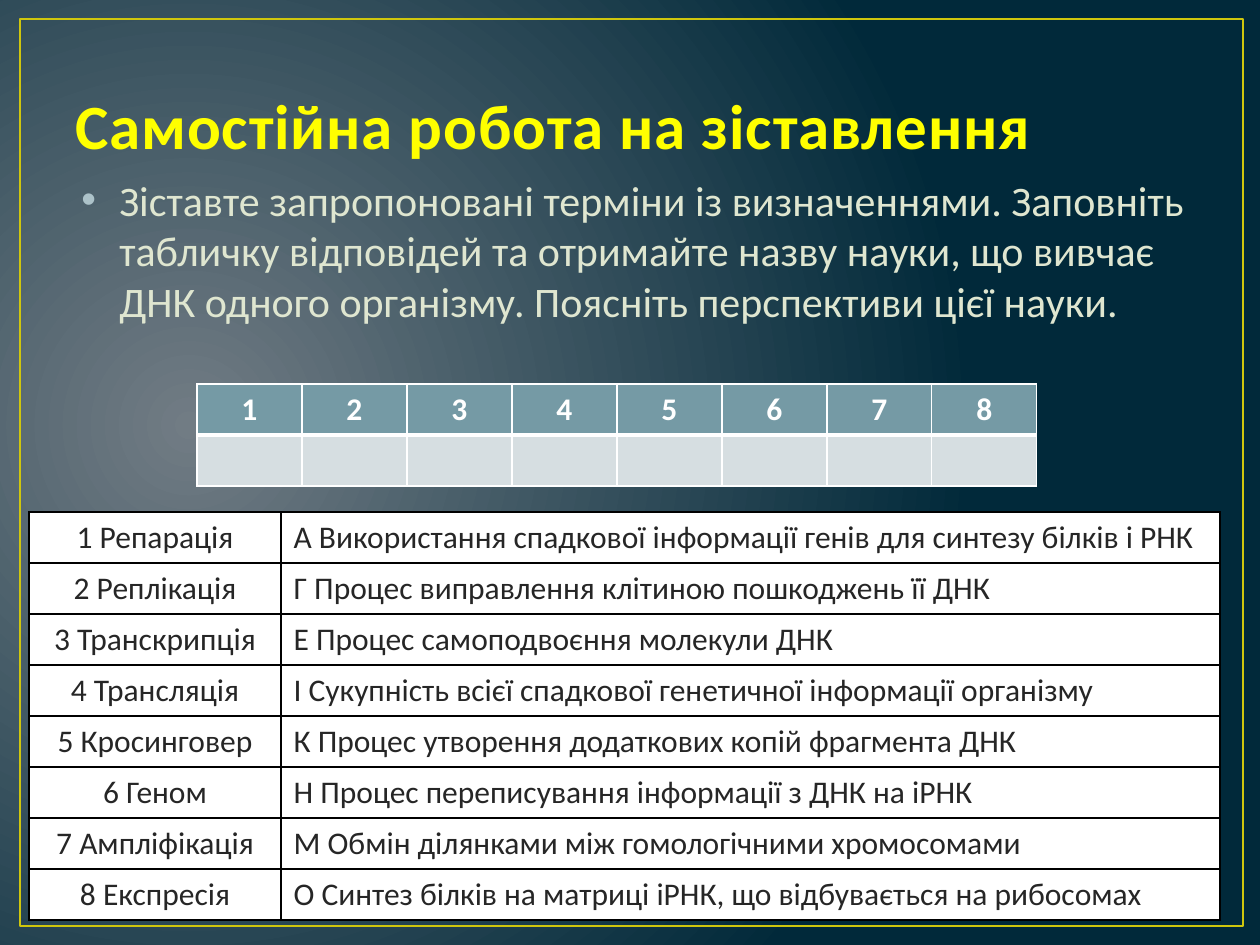
from lxml import etree
from pptx import Presentation
from pptx.dml.color import RGBColor
from pptx.enum.shapes import MSO_SHAPE
from pptx.enum.text import MSO_ANCHOR, PP_ALIGN
from pptx.oxml.ns import qn
from pptx.util import Emu, Pt

RECT = MSO_SHAPE.RECTANGLE
LEFT, CENTER = PP_ALIGN.LEFT, PP_ALIGN.CENTER
TOP, BOTTOM = MSO_ANCHOR.TOP, MSO_ANCHOR.BOTTOM
FONT = "Calibri"

# Content
TITLE = "Самостійна робота на зіставлення"
TASK = ("Зіставте запропоновані терміни із визначеннями. Заповніть табличку "
        "відповідей та отримайте назву науки, що вивчає ДНК одного організму. "
        "Поясніть перспективи цієї науки.")
TERMS = [
    ("1 Репарація", "А Використання спадкової інформації генів для синтезу білків і РНК"),
    ("2 Реплікація", "Г Процес виправлення клітиною пошкоджень її ДНК"),
    ("3 Транскрипція", "Е Процес самоподвоєння молекули ДНК"),
    ("4 Трансляція", "І Сукупність всієї спадкової генетичної інформації організму"),
    ("5 Кросинговер", "К Процес утворення додаткових копій фрагмента ДНК"),
    ("6 Геном", "Н Процес переписування інформації з ДНК на іРНК"),
    ("7 Ампліфікація", "М Обмін ділянками між гомологічними хромосомами"),
    ("8 Експресія", "О Синтез білків на матриці іРНК, що відбувається на рибосомах"),
]
COLORS = {
    "glow": "717C84", "deep": "01293A", "frame": "CFC60D", "title": "FFFF00",
    "task": "DFE6D0", "bullet": "ACC2C9", "ink": "262626", "white": "FFFFFF",
    "black": "000000", "head": "759AA5", "answer": "D6DEE1",
}
ROW = 51


def px(n):
    return Emu(round(n * 914400 / 126))


def rgb(name):
    return RGBColor.from_string(COLORS[name])


def style(para, size, color, bold=False, align=LEFT):
    para.alignment = align
    font = para.font
    font.name, font.size, font.bold = FONT, Pt(size), bold
    font.color.rgb = rgb(color)


def add_text(slide, box, text, size, color, bold=False, anchor=TOP):
    frame = slide.shapes.add_textbox(*map(px, box)).text_frame
    frame.word_wrap = True
    frame.vertical_anchor = anchor
    para = frame.paragraphs[0]
    para.text = text
    style(para, size, color, bold)
    return para


def add_grid(slide, left, top, cols, count):
    table = slide.shapes.add_table(
        count, len(cols), px(left), px(top), px(sum(cols)), px(ROW * count)).table
    for col, width in zip(table.columns, cols):
        col.width = px(width)
    for row in table.rows:
        row.height = px(ROW)
    return table


def fill_cell(cell, text, fill, ink, line, widths, bold=False, align=CENTER, anchor=TOP):
    cell.fill.solid()
    cell.fill.fore_color.rgb = rgb(fill)
    cell.vertical_anchor = anchor
    cell.text = text
    style(cell.text_frame.paragraphs[0], 18, ink, bold, align)
    # Borders go before the fill
    props = cell._tc.get_or_add_tcPr()
    for i, (side, width) in enumerate(zip("LRTB", widths)):
        edge = etree.Element(qn(f"a:ln{side}"), w=str(Pt(width)))
        solid = etree.SubElement(edge, qn("a:solidFill"))
        etree.SubElement(solid, qn("a:srgbClr"), val=COLORS[line])
        props.insert(i, edge)


def paint_back(slide):
    fill = slide.background.fill
    fill.gradient()
    for stop, name in zip(fill.gradient_stops, ("glow", "deep")):
        stop.color.rgb = rgb(name)
    grad = next(slide._element.iter(qn("a:gradFill")))
    path = etree.Element(qn("a:path"), {"path": "circle"})
    etree.SubElement(path, qn("a:fillToRect"), l="15000", t="50000", r="85000", b="60000")
    grad.replace(grad.find(qn("a:lin")), path)


def main():
    prs = Presentation()
    prs.slide_width, prs.slide_height = px(1260), px(945)
    slide = prs.slides.add_slide(prs.slide_layouts[6])
    paint_back(slide)

    # Frame
    frame = slide.shapes.add_shape(RECT, *map(px, (20, 19, 1223, 907)))
    frame.shadow.inherit = False
    frame.fill.background()
    frame.line.color.rgb = rgb("frame")
    frame.line.width = Pt(1.5)

    # Title and task
    title = add_text(slide, (63, 38, 1134, 130), TITLE, 36, "title", True, BOTTOM)
    title.runs[0].font._element.set("spc", "50")
    task = add_text(slide, (69, 168, 1134, 624), TASK, 24, "task")
    props = task._p.get_or_add_pPr()
    props.set("marL", str(px(38)))
    props.set("indent", str(px(-38)))
    tint = etree.Element(qn("a:buClr"))
    etree.SubElement(tint, qn("a:srgbClr"), val=COLORS["bullet"])
    mark = etree.Element(qn("a:buFont"), typeface="Arial")
    dot = etree.Element(qn("a:buChar"), char="•")
    for i, part in enumerate((tint, mark, dot)):
        props.insert(i, part)

    # Terms and definitions
    table = add_grid(slide, 29, 512, (252, 939), len(TERMS))
    for r, pair in enumerate(TERMS):
        for c, (text, align) in enumerate(zip(pair, (CENTER, LEFT))):
            fill_cell(table.cell(r, c), text, "white", "ink", "black",
                      [0.75] * 4, align=align, anchor=BOTTOM)

    # Answer grid
    table = add_grid(slide, 197, 384, [105] * len(TERMS), 2)
    for c in range(len(TERMS)):
        fill_cell(table.cell(0, c), str(c + 1), "head", "white", "white",
                  (1, 1, 1, 3), bold=True)
        fill_cell(table.cell(1, c), "", "answer", "ink", "white", (1, 1, 3, 1))

    prs.save("out.pptx")


if __name__ == "__main__":
    main()
